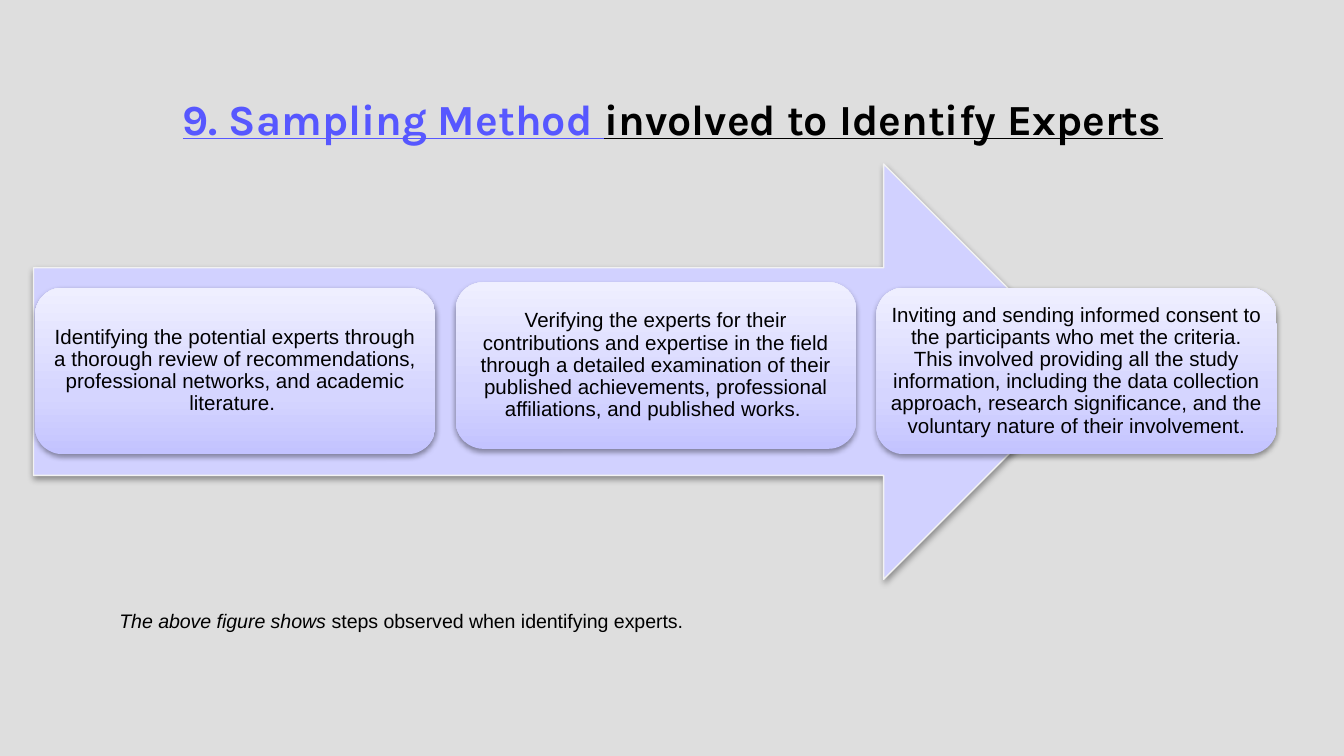
from copy import deepcopy

from lxml.etree import SubElement
from pptx import Presentation
from pptx.dml.color import RGBColor
from pptx.enum.shapes import MSO_SHAPE
from pptx.enum.text import MSO_ANCHOR, PP_ALIGN
from pptx.oxml.ns import qn
from pptx.util import Inches, Pt

BLACK = RGBColor(0x00, 0x00, 0x00)
BLUE = RGBColor(0x57, 0x57, 0xFF)
GREY = RGBColor(0xDE, 0xDE, 0xDE)
PALE = RGBColor(0xD1, 0xD1, 0xFF)
EDGE = RGBColor(0xF2, 0xF2, 0xF2)
STOPS = [
    (0, RGBColor(0xC3, 0xC3, 0xFF)),
    (0.35, RGBColor(0xD5, 0xD5, 0xFF)),
    (1, RGBColor(0xEF, 0xEF, 0xFF)),
]

STEPS = [
    "Identifying the potential experts through a thorough review of "
    "recommendations, professional networks, and academic literature. ",
    "Verifying the experts for their contributions and expertise in the field "
    "through a detailed examination of their published achievements, "
    "professional affiliations, and published works. ",
    "Inviting and sending informed consent to the participants who met the "
    "criteria. This involved providing all the study information, including "
    "the data collection approach, research significance, and the voluntary "
    "nature of their involvement.",
]
TOPS = [2.14, 2.1, 2.14]
LEFT, STRIDE = 0.26, 3.13


class Deck:
    head_font = "Karla"
    body_font = "Arial"

    def __init__(self):
        self.file = Presentation()
        self.file.slide_width = Inches(10)
        self.file.slide_height = Inches(10) * 9 // 16
        self.slide = self.file.slides.add_slide(self.file.slide_layouts[6])
        fill = self.slide.background.fill
        fill.solid()
        fill.fore_color.rgb = GREY

    def shape(self, kind, box):
        return self.slide.shapes.add_shape(kind, *map(Inches, box))

    def shade(self, shape):
        """Give the shape a soft shadow straight below it."""
        shape.shadow.inherit = False
        effects = shape._element.spPr.find(qn("a:effectLst"))
        outer = SubElement(effects, qn("a:outerShdw"), blurRad=str(Pt(3.1)),
                           dist=str(Pt(1.6)), dir="5400000", rotWithShape="0")
        color = SubElement(outer, qn("a:srgbClr"), val=str(BLACK))
        SubElement(color, qn("a:alpha"), val="38000")

    def arrow(self, box):
        arrow = self.shape(MSO_SHAPE.RIGHT_ARROW, box)
        arrow.fill.solid()
        arrow.fill.fore_color.rgb = PALE
        arrow.line.color.rgb = EDGE
        arrow.line.width = Pt(0.75)
        self.shade(arrow)

    def blend(self, shape):
        """Fill from dark at the bottom to light at the top."""
        fill = shape.fill
        fill.gradient()
        fill.gradient_angle = 90
        stops = shape._element.spPr.find(".//" + qn("a:gsLst"))
        stops.append(deepcopy(stops[0]))
        for stop, (place, color) in zip(fill.gradient_stops, STOPS):
            stop.position = place
            stop.color.rgb = color

    def step(self, text, box):
        card = self.shape(MSO_SHAPE.ROUNDED_RECTANGLE, box)
        self.blend(card)
        card.line.fill.background()
        self.shade(card)
        frame = card.text_frame
        frame.word_wrap = True
        frame.vertical_anchor = MSO_ANCHOR.MIDDLE
        frame.margin_left = frame.margin_right = Inches(0.04)
        frame.margin_top = frame.margin_bottom = Inches(0.04)
        para = frame.paragraphs[0]
        para.text = text
        para.alignment = PP_ALIGN.CENTER
        para.line_spacing = 0.9
        para.font.name = self.body_font
        para.font.size = Pt(11)
        para.font.color.rgb = BLACK

    def text(self, box, name, size):
        """Add a text box and return its frame and first paragraph."""
        frame = self.slide.shapes.add_textbox(*map(Inches, box)).text_frame
        frame.word_wrap = True
        para = frame.paragraphs[0]
        para.font.name = name
        para.font.size = Pt(size)
        para.font.color.rgb = BLACK
        return frame, para

    def title(self, lead, rest, box):
        frame, para = self.text(box, self.head_font, 23)
        frame.margin_top = frame.margin_bottom = Inches(0.1)
        para.alignment = PP_ALIGN.CENTER
        para.font.bold = True
        para.font.underline = True
        run = para.add_run()
        run.text = lead
        run.font.color.rgb = BLUE
        para.add_run().text = rest

    def note(self, lead, rest, box):
        _, para = self.text(box, self.body_font, 10.5)
        run = para.add_run()
        run.text = lead
        run.font.italic = True
        para.add_run().text = rest


def main():
    deck = Deck()
    deck.title("9. Sampling Method ", "involved to Identify Experts",
               (0.79, 0.59, 8.43, 0.63))
    deck.arrow((0.25, 1.22, 7.87, 3.09))
    for i, (text, top) in enumerate(zip(STEPS, TOPS)):
        deck.step(text, (LEFT + i * STRIDE, top, 2.98, 1.24))
    deck.note("The above figure shows ",
              "steps observed when identifying experts.",
              (0.79, 4.48, 4.47, 0.28))
    deck.file.save("out.pptx")


if __name__ == "__main__":
    main()
